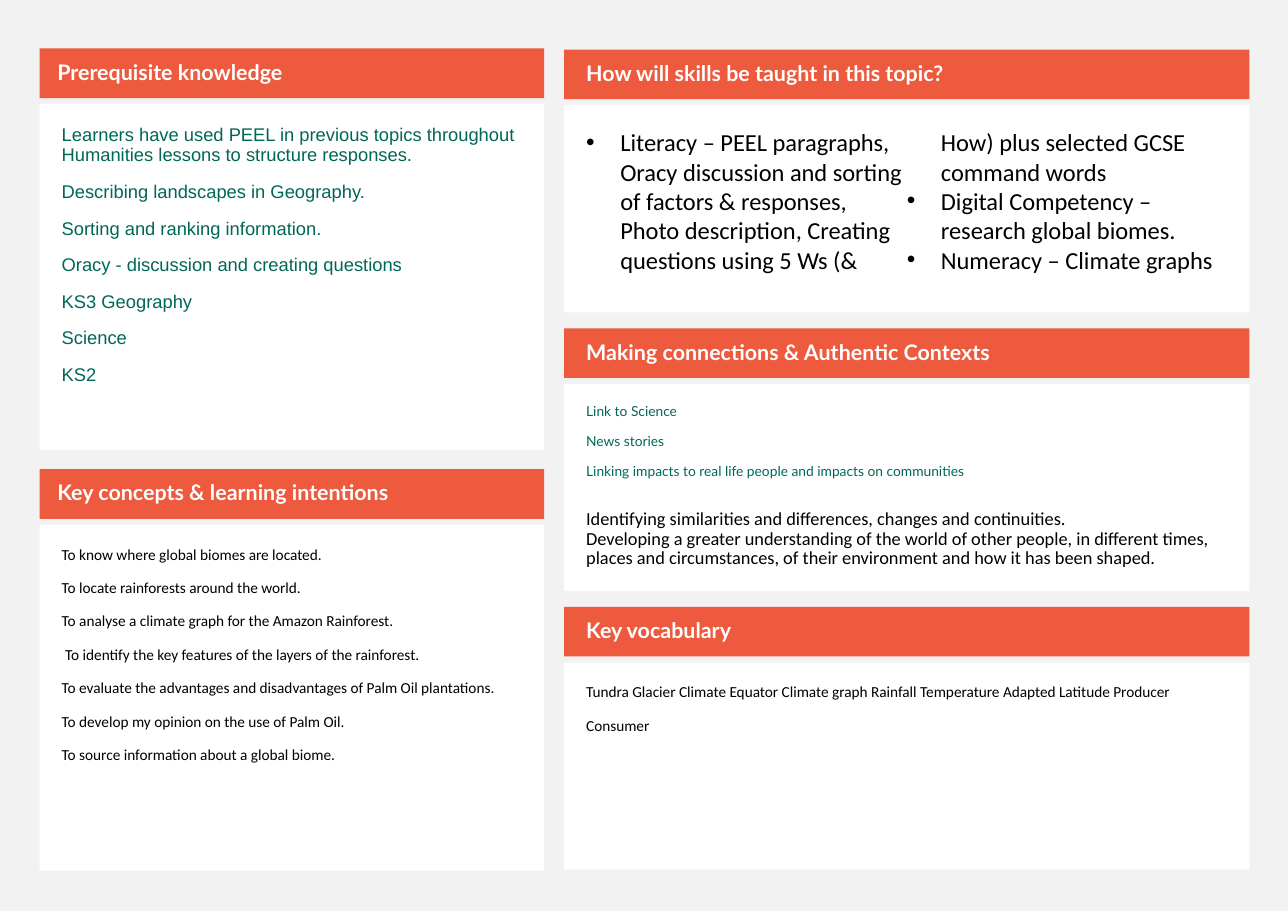
import pptx
import pptx.util
import pptx.dml.color
import pptx.enum.shapes
import pptx.enum.text
import lxml.etree
from pptx.util import Inches, Pt

COLORS = {"page": "F2F2F2", "header": "ED5A3E", "panel": "FFFFFF",
          "title": "FFFFFF", "green": "006758", "black": "000000"}
HEADER_H = 0.45
BODY_OFFSET = 0.505

# Text styles: font, size, colour, line spacing, space before
GREEN_NOTE = ("Arial", 12, "green", 0.9, 11)
BLACK_NOTE = ("Calibri", 10, "black", 0.9, 11)
SKILL = ("Calibri", 16, "black", 1.0, 0)
LINK = ("Lato", 9, "green", 0.8, 11)
CONTEXT_FIRST = ("Calibri", 12, "black", 0.9, 19.6)
CONTEXT = ("Calibri", 12, "black", 0.9, 0)
HEADING = ("Lato", 14, "title", 0.9, 11)

PREREQUISITES = [
    "Learners have used PEEL in previous topics throughout Humanities lessons to structure responses.",
    "Describing landscapes in Geography.",
    "Sorting and ranking information.",
    "Oracy - discussion and creating questions",
    "KS3 Geography",
    "Science",
    "KS2",
]
CONCEPTS = [
    "To know where global biomes are located.",
    "To locate rainforests around the world.",
    "To analyse a climate graph for the Amazon Rainforest.",
    " To identify the key features of the layers of the rainforest.",
    "To evaluate the advantages and disadvantages of Palm Oil plantations.",
    "To develop my opinion on the use of Palm Oil.",
    "To source information about a global biome.",
]
SKILLS = [
    "Literacy – PEEL paragraphs, Oracy discussion and sorting of factors & responses, "
    "Photo description, Creating questions using 5 Ws (& How) plus selected GCSE command words",
    "Digital Competency – research global biomes.",
    "Numeracy – Climate graphs",
]
LINKS = ["Link to Science", "News stories",
         "Linking impacts to real life people and impacts on communities"]
CONTEXTS = [
    "Identifying similarities and differences, changes and continuities.",
    "Developing a greater understanding of the world of other people, in different times, "
    "places and circumstances, of their environment and how it has been shaped.",
]
VOCABULARY = [
    "Tundra Glacier Climate Equator Climate graph Rainfall Temperature Adapted Latitude Producer",
    "Consumer",
]


def rgb(name):
    return pptx.dml.color.RGBColor.from_string(COLORS[name])


def styled(style, texts):
    return [(text, style) for text in texts]


def add_box(slide, x, y, w, h, fill, insets, anchor):
    """Add a plain filled rectangle and return its text frame."""
    sp = slide.shapes.add_shape(pptx.enum.shapes.MSO_SHAPE.RECTANGLE,
                                Inches(x), Inches(y), Inches(w), Inches(h))
    sp.shadow.inherit = False
    sp.fill.solid()
    sp.fill.fore_color.rgb = rgb(fill)
    sp.line.fill.background()
    tf = sp.text_frame
    tf.word_wrap = True
    tf.vertical_anchor = anchor
    tf.margin_left, tf.margin_top, tf.margin_right, tf.margin_bottom = map(Inches, insets)
    return tf


def write(tf, items):
    """Fill a text frame with (text, style) paragraphs."""
    for i, (text, (font, size, color, spacing, before)) in enumerate(items):
        p = tf.paragraphs[0] if i == 0 else tf.add_paragraph()
        p.text = text
        p.alignment = pptx.enum.text.PP_ALIGN.LEFT
        p.line_spacing = spacing
        p.space_before = Pt(before)
        for r in p.runs:
            r.font.name = font
            r.font.size = Pt(size)
            r.font.bold = items[i][1] is HEADING
            r.font.color.rgb = rgb(color)


def bullet_columns(tf, indent=0.31):
    """Set the text in two columns of hanging bullets."""
    ns = pptx.oxml.ns.qn
    tf._txBody.bodyPr.set("numCol", "2")
    for p in tf.paragraphs:
        ppr = p._p.get_or_add_pPr()
        ppr.set("marL", str(Inches(indent)))
        ppr.set("indent", str(-Inches(indent)))
        lxml.etree.SubElement(ppr, ns("a:buFont")).set("typeface", "Arial")
        lxml.etree.SubElement(ppr, ns("a:buChar")).set("char", "•")


def add_section(slide, x, y, w, body_h, inset, heading, items):
    """Add a header bar with its panel below; return the panel's text frame."""
    anchors = pptx.enum.text.MSO_ANCHOR
    tf = add_box(slide, x, y, w, HEADER_H, "header", (inset, 0.05, 0.1, 0.05), anchors.MIDDLE)
    write(tf, [(heading, HEADING)])
    body = add_box(slide, x, y + BODY_OFFSET, w, body_h, "panel", (0.2,) * 4, anchors.TOP)
    write(body, items)
    return body


def add_column(slide, x, y, w, pitch, body_h, inset, sections):
    return [add_section(slide, x, y + i * pitch, w, body_h, inset, heading, items)
            for i, (heading, items) in enumerate(sections)]


def main():
    prs = pptx.Presentation()
    prs.slide_width, prs.slide_height = Inches(11.69), Inches(8.27)
    slide = prs.slides.add_slide(prs.slide_layouts[6])
    slide.background.fill.solid()
    slide.background.fill.fore_color.rgb = rgb("page")

    add_column(slide, 0.36, 0.44, 4.58, 3.82, 3.14, 0.16, [
        ("Prerequisite knowledge", styled(GREEN_NOTE, PREREQUISITES)),
        ("Key concepts & learning intentions", styled(BLACK_NOTE, CONCEPTS)),
    ])
    contexts = [(CONTEXTS[0], CONTEXT_FIRST), (CONTEXTS[1], CONTEXT)]
    skills, *_ = add_column(slide, 5.12, 0.45, 6.22, 2.53, 1.88, 0.2, [
        ("How will skills be taught in this topic?", styled(SKILL, SKILLS)),
        ("Making connections & Authentic Contexts", styled(LINK, LINKS) + contexts),
        ("Key vocabulary", styled(BLACK_NOTE, VOCABULARY)),
    ])
    bullet_columns(skills)
    prs.save("out.pptx")


if __name__ == "__main__":
    main()
